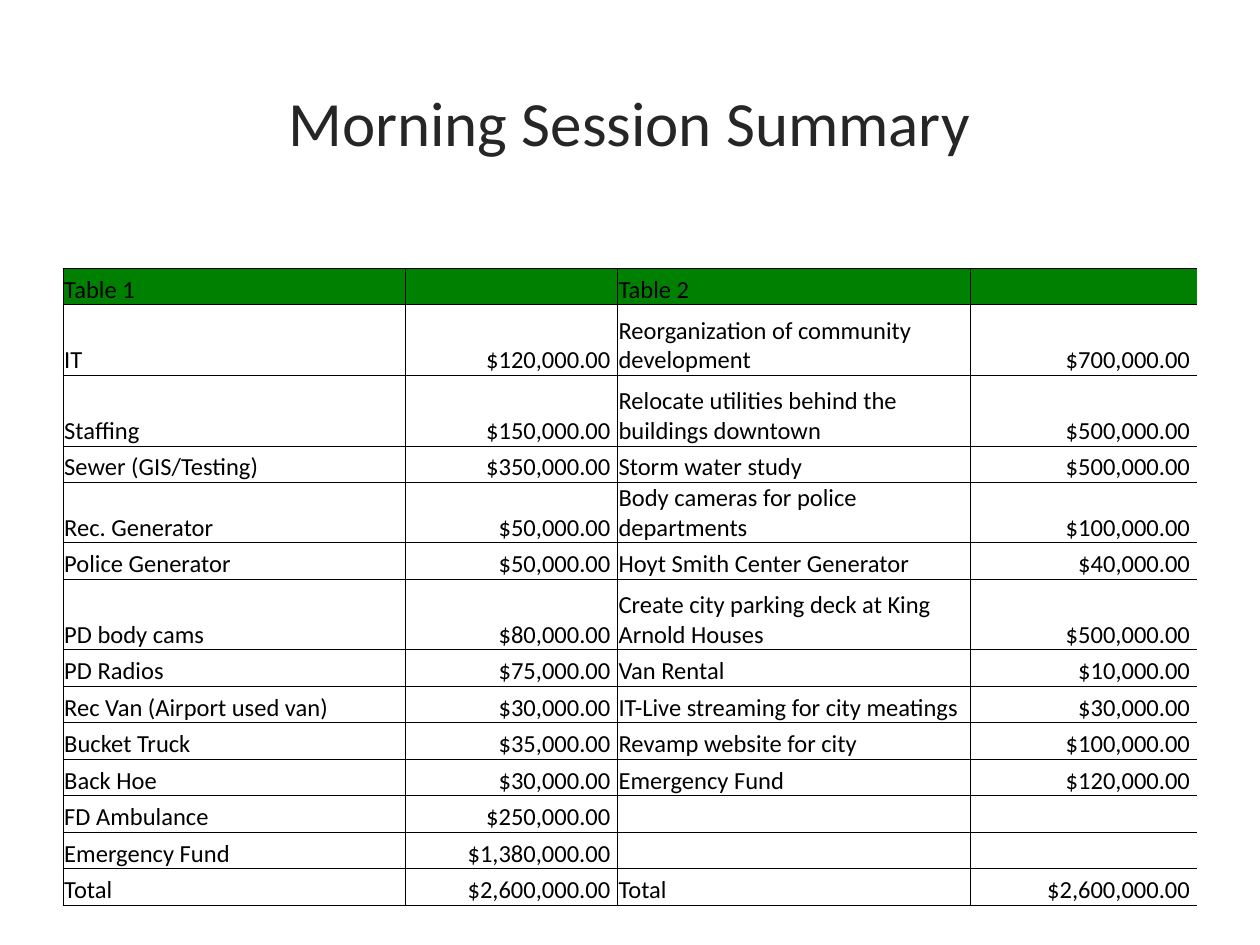
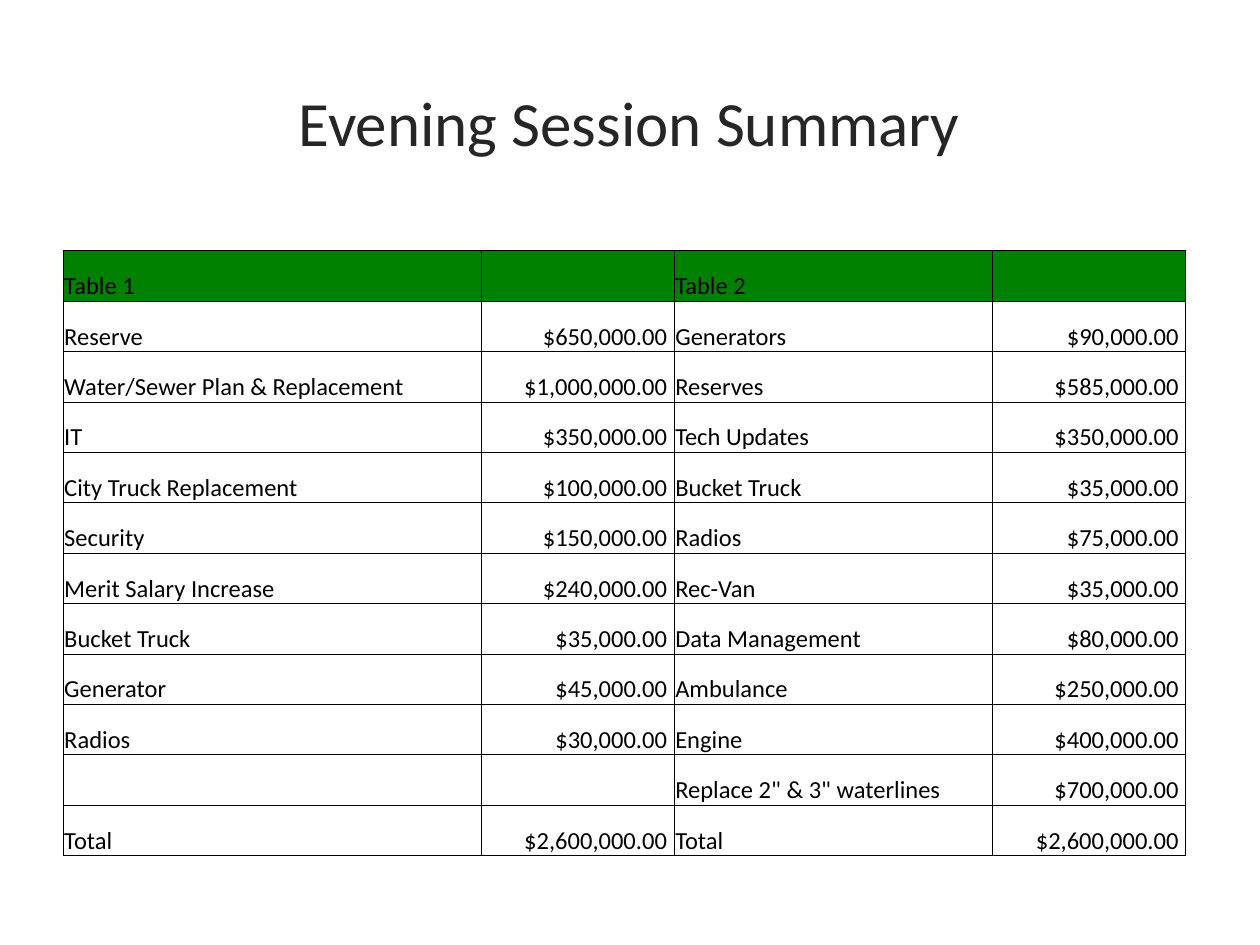
import pptx
import pptx.dml.color
import pptx.enum.text
import pptx.oxml.ns
import pptx.util
import lxml.etree

Inches = pptx.util.Inches
RGB = pptx.dml.color.RGBColor
ALIGN = pptx.enum.text.PP_ALIGN
ANCHOR = pptx.enum.text.MSO_ANCHOR
qn = pptx.oxml.ns.qn

GREEN = RGB(0x00, 0x80, 0x00)
BLACK = RGB(0x00, 0x00, 0x00)
GREY = RGB(0x26, 0x26, 0x26)
FONT = "Calibri"
TITLE_BOX = (0.79, 0.34, 8.41, 1.25)
TITLE_SIZE, CELL_SIZE, LINE = 36, 14, 0.5
HEAD = ("Table 1", None, "Table 2", None)
TOTAL = ("Total", 2600000, "Total", 2600000)
CELL = {
    "margin_left": Inches(0.01),
    "margin_right": Inches(0.01),
    "margin_top": Inches(0.01),
    "margin_bottom": 0,
    "vertical_anchor": ANCHOR.BOTTOM,
}
PLAIN = {"first_row": False, "horz_banding": False}

SLIDES = [
    {
        "title": "Morning Session Summary",
        "left": 0.5, "top": 2.13,
        "cols": (2.72, 1.68, 2.8, 1.8),
        "row": 0.29, "tall": {1: 0.56, 2: 0.56, 6: 0.56},
        "closed": False,
        "items": [
            ("IT", 120000, "Reorganization of community development", 700000),
            ("Staffing", 150000, "Relocate utilities behind the buildings downtown", 500000),
            ("Sewer (GIS/Testing)", 350000, "Storm water study", 500000),
            ("Rec. Generator", 50000, "Body cameras for police departments", 100000),
            ("Police Generator", 50000, "Hoyt Smith Center Generator", 40000),
            ("PD body cams", 80000, "Create city parking deck at King Arnold Houses", 500000),
            ("PD Radios", 75000, "Van Rental", 10000),
            ("Rec Van (Airport used van)", 30000, "IT-Live streaming for city meatings", 30000),
            ("Bucket Truck", 35000, "Revamp website for city", 100000),
            ("Back Hoe", 30000, "Emergency Fund", 120000),
            ("FD Ambulance", 250000, None, None),
            ("Emergency Fund", 1380000, None, None),
        ],
    },
    {
        "title": "Evening Session Summary",
        "left": 0.5, "top": 1.99,
        "cols": (3.32, 1.53, 2.53, 1.53),
        "row": 0.4, "tall": {},
        "closed": True,
        "items": [
            ("Reserve", 650000, "Generators", 90000),
            ("Water/Sewer Plan & Replacement", 1000000, "Reserves", 585000),
            ("IT", 350000, "Tech Updates", 350000),
            ("City Truck Replacement", 100000, "Bucket Truck", 35000),
            ("Security", 150000, "Radios", 75000),
            ("Merit Salary Increase", 240000, "Rec-Van", 35000),
            ("Bucket Truck", 35000, "Data Management", 80000),
            ("Generator", 45000, "Ambulance", 250000),
            ("Radios", 30000, "Engine", 400000),
            (None, None, "Replace 2\" & 3\" waterlines", 700000),
        ],
    },
]


def apply(thing, form):
    for key, val in form.items():
        setattr(thing, key, val)


def write(para, text, size, color, align):
    para.alignment = align
    run = para.add_run()
    run.text = text
    apply(run.font, {"name": FONT, "size": pptx.util.Pt(size)})
    run.font.color.rgb = color


def border(cell, open_side):
    props = cell._tc.get_or_add_tcPr()
    for side in "LRTB":
        line = lxml.etree.SubElement(props, qn("a:ln" + side), w=str(pptx.util.Pt(LINE)))
        if side == open_side:
            lxml.etree.SubElement(line, qn("a:noFill"))
        else:
            fill = lxml.etree.SubElement(line, qn("a:solidFill"))
            lxml.etree.SubElement(fill, qn("a:srgbClr"), val=str(BLACK))


def fill_cell(cell, value, is_head, open_side):
    apply(cell, CELL)
    border(cell, open_side)
    if is_head:
        cell.fill.solid()
        cell.fill.fore_color.rgb = GREEN
    else:
        cell.fill.background()
    para = cell.text_frame.paragraphs[0]
    if value is None:
        size = str(CELL_SIZE * 100)
        lxml.etree.SubElement(para._p, qn("a:endParaRPr"), sz=size)
    elif isinstance(value, str):
        write(para, value, CELL_SIZE, BLACK, ALIGN.LEFT)
    else:
        write(para, f" ${value:,.2f} ", CELL_SIZE, BLACK, ALIGN.RIGHT)


def add_title(slide, text):
    frame = slide.shapes.add_textbox(*map(Inches, TITLE_BOX)).text_frame
    apply(frame, {"word_wrap": True, "vertical_anchor": ANCHOR.MIDDLE})
    write(frame.paragraphs[0], text, TITLE_SIZE, GREY, ALIGN.CENTER)


def add_budget(slide, data):
    rows = [HEAD, *data["items"], TOTAL]
    cols = data["cols"]
    highs = [data["tall"].get(r, data["row"]) for r in range(len(rows))]
    box = (data["left"], data["top"], sum(cols), sum(highs))
    table = slide.shapes.add_table(len(rows), len(cols), *map(Inches, box)).table
    apply(table, PLAIN)
    for col, wide in zip(table.columns, cols):
        col.width = Inches(wide)
    for r, (row, high) in enumerate(zip(rows, highs)):
        table.rows[r].height = Inches(high)
        for c, value in enumerate(row):
            is_open = c == len(cols) - 1 and not data["closed"]
            fill_cell(table.cell(r, c), value, r == 0, "R" if is_open else None)


def main():
    deck = pptx.Presentation()
    apply(deck, {"slide_width": Inches(10), "slide_height": Inches(7.5)})
    for data in SLIDES:
        slide = deck.slides.add_slide(deck.slide_layouts[6])
        add_title(slide, data["title"])
        add_budget(slide, data)
    deck.save("out.pptx")


if __name__ == "__main__":
    main()
